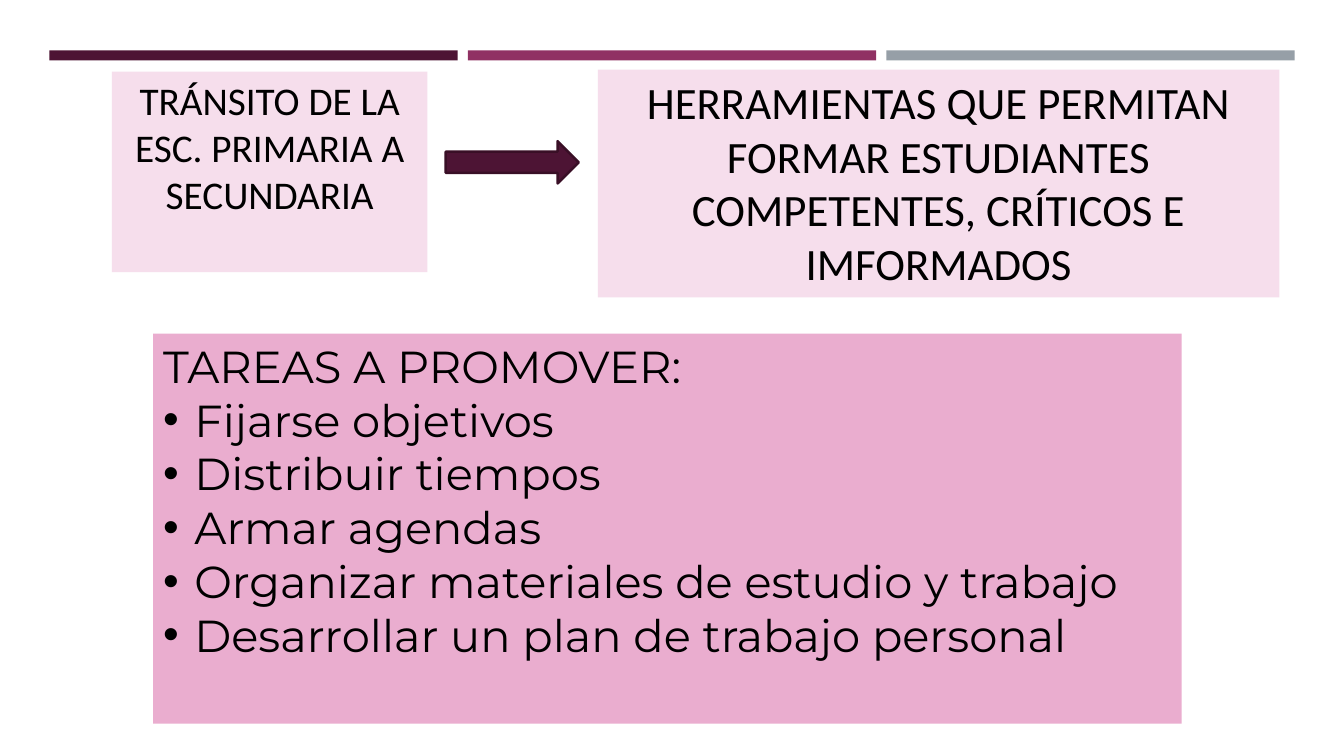
from dataclasses import dataclass
from lxml import etree
from pptx import Presentation
from pptx.dml.color import RGBColor
from pptx.enum.shapes import MSO_SHAPE
from pptx.enum.text import MSO_ANCHOR, MSO_AUTO_SIZE, PP_ALIGN
from pptx.oxml.ns import qn
from pptx.util import Inches, Pt


@dataclass(frozen=True)
class Theme:
    plum: str = "4D1434"
    magenta: str = "903163"
    gray: str = "969FA7"
    dark_plum: str = "390F26"
    pale_pink: str = "F6DEEC"
    pink: str = "EAADCF"
    black: str = "000000"
    heading_font: str = "Calibri"
    task_font: str = "Montserrat"
    small: int = 28
    large: int = 32


theme = Theme()
presentation = Presentation()
presentation.slide_width = Inches(13.33)
presentation.slide_height = Inches(7.5)
slide = presentation.slides.add_slide(presentation.slide_layouts[6])


def add_block(kind, left, top, width, height, fill):
    block = slide.shapes.add_shape(kind, Inches(left), Inches(top), Inches(width), Inches(height))
    block.shadow.inherit = False
    block.fill.solid()
    block.fill.fore_color.rgb = RGBColor.from_string(fill)
    block.line.fill.background()
    return block


def write_lines(block, lines, font, size, align):
    frame = block.text_frame
    frame.word_wrap = True
    frame.auto_size = MSO_AUTO_SIZE.NONE
    frame.vertical_anchor = MSO_ANCHOR.TOP
    frame.text = "\n".join(lines)
    for paragraph in frame.paragraphs:
        paragraph.alignment = align
        for run in paragraph.runs:
            run.font.name = font
            run.font.size = Pt(size)
            run.font.color.rgb = RGBColor.from_string(theme.black)


for column, color in enumerate((theme.plum, theme.magenta, theme.gray)):
    add_block(MSO_SHAPE.RECTANGLE, 0.49 + 4.15 * column, 0.5, 4.05, 0.1, color)

transition = add_block(MSO_SHAPE.RECTANGLE, 1.11, 0.71, 3.13, 1.99, theme.pale_pink)
write_lines(transition, ["TRÁNSITO DE LA ESC. PRIMARIA A SECUNDARIA"],
            theme.heading_font, theme.small, PP_ALIGN.CENTER)

leads_to = add_block(MSO_SHAPE.RIGHT_ARROW, 4.42, 1.4, 1.32, 0.42, theme.plum)
leads_to.line.color.rgb = RGBColor.from_string(theme.dark_plum)
leads_to.line.width = Pt(1.75)

tools = add_block(MSO_SHAPE.RECTANGLE, 5.93, 0.69, 6.76, 2.26, theme.pale_pink)
write_lines(tools, ["HERRAMIENTAS QUE PERMITAN FORMAR ESTUDIANTES COMPETENTES, CRÍTICOS E IMFORMADOS"],
            theme.heading_font, theme.large, PP_ALIGN.CENTER)

tasks = add_block(MSO_SHAPE.RECTANGLE, 1.52, 3.31, 10.2, 3.87, theme.pink)
write_lines(tasks, [
    "TAREAS A PROMOVER:",
    "Fijarse objetivos",
    "Distribuir tiempos",
    "Armar agendas",
    "Organizar materiales de estudio y trabajo",
    "Desarrollar un plan de trabajo personal",
], theme.task_font, theme.large, PP_ALIGN.LEFT)

for task in tasks.text_frame.paragraphs[1:]:
    properties = task._p.get_or_add_pPr()
    properties.set("marL", str(Inches(0.31)))
    properties.set("indent", str(Inches(-0.31)))
    etree.SubElement(properties, qn("a:buFont")).set("typeface", "Arial")
    etree.SubElement(properties, qn("a:buChar")).set("char", "•")

presentation.save("out.pptx")
